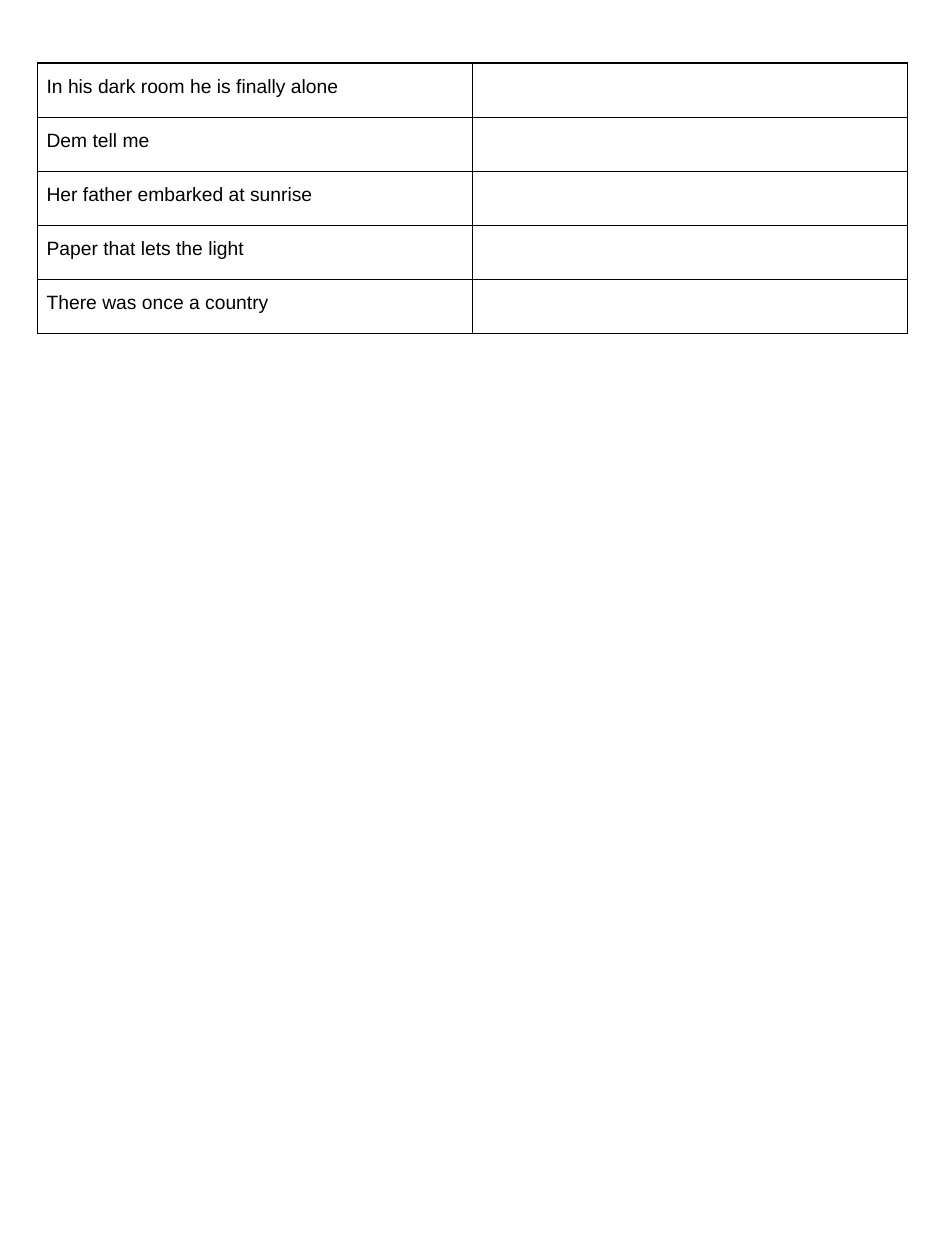
import dataclasses

import pptx
import pptx.dml.color
import pptx.enum.text
import pptx.oxml
import pptx.oxml.ns
import pptx.util

Inches = pptx.util.Inches
Pt = pptx.util.Pt


@dataclasses.dataclass(frozen=True)
class Theme:
    font: str = "Arial"
    text_size: float = 11
    text_color: str = "000000"
    border_color: str = "000000"
    border_width: float = 0.75


THEME = Theme()

FIRST_LINES = [
    "In his dark room he is finally alone",
    "Dem tell me",
    "Her father embarked at sunrise",
    "Paper that lets the light",
    "There was once a country",
]
COLUMN_WIDTH = 3.45
ROW_HEIGHT = 0.43


def apply_format(target, values):
    for name, value in values.items():
        setattr(target, name, value)


def add_borders(cell):
    """Draw all four cell edges; the schema wants them ahead of the fill."""
    properties = cell._tc.get_or_add_tcPr()
    for position, side in enumerate(("lnL", "lnR", "lnT", "lnB")):
        edge = pptx.oxml.parse_xml(
            f'<a:{side} {pptx.oxml.ns.nsdecls("a")} w="{Pt(THEME.border_width)}">'
            f'<a:solidFill><a:srgbClr val="{THEME.border_color}"/></a:solidFill>'
            f'</a:{side}>'
        )
        properties.insert(position, edge)


def format_cell(cell):
    cell.fill.background()
    add_borders(cell)


def write_text(cell, text):
    apply_format(cell, {
        "margin_left": Inches(0.07),
        "margin_right": Inches(0.07),
        "margin_top": Inches(0.1),
        "margin_bottom": Inches(0.1),
        "vertical_anchor": pptx.enum.text.MSO_ANCHOR.TOP,
    })
    para = cell.text_frame.paragraphs[0]
    apply_format(para, {"space_before": Pt(12), "space_after": Pt(12)})
    span = para.add_run()
    span.text = text
    apply_format(span.font, {
        "name": THEME.font,
        "size": Pt(THEME.text_size),
        "bold": False,
    })
    span.font.color.rgb = pptx.dml.color.RGBColor.from_string(THEME.text_color)


def add_line_table(page, lines):
    """Put each first line on the left, with an empty cell for the answer."""
    table = page.shapes.add_table(
        len(lines), 2, Inches(0.3), Inches(0.5),
        Inches(2 * COLUMN_WIDTH), Inches(len(lines) * ROW_HEIGHT),
    ).table
    apply_format(table, {"first_row": False, "horz_banding": False})
    for column in table.columns:
        column.width = Inches(COLUMN_WIDTH)
    for row, line in zip(table.rows, lines):
        row.height = Inches(ROW_HEIGHT)
        for cell in row.cells:
            format_cell(cell)
        write_text(row.cells[0], line)


def main():
    deck = pptx.Presentation()
    apply_format(deck, {"slide_width": Inches(7.5), "slide_height": Inches(10)})
    page = deck.slides.add_slide(deck.slide_layouts[6])
    add_line_table(page, FIRST_LINES)
    deck.save("out.pptx")


if __name__ == "__main__":
    main()
